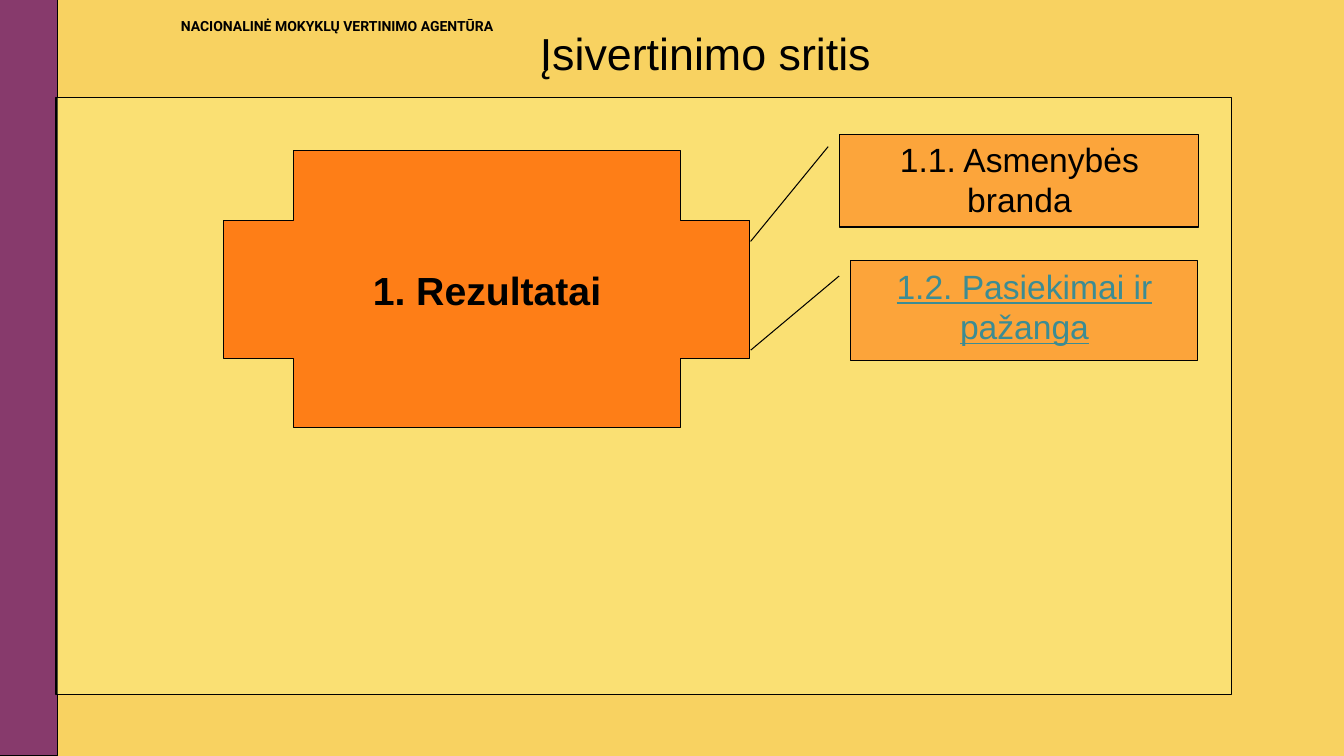
from dataclasses import dataclass

from lxml import etree
from pptx import Presentation
from pptx.dml.color import RGBColor
from pptx.enum.shapes import MSO_SHAPE
from pptx.enum.text import MSO_ANCHOR, MSO_AUTO_SIZE, PP_ALIGN
from pptx.oxml.ns import qn
from pptx.util import Emu, Pt

RECT, CROSS, CALLOUT = MSO_SHAPE.RECTANGLE, MSO_SHAPE.CROSS, MSO_SHAPE.LINE_CALLOUT_1
TOP, MIDDLE = MSO_ANCHOR.TOP, MSO_ANCHOR.MIDDLE
LEFT, CENTER = PP_ALIGN.LEFT, PP_ALIGN.CENTER
NO_FIT = MSO_AUTO_SIZE.NONE


@dataclass(frozen=True)
class Theme:
    back: str = "F8D261"
    band: str = "873A6C"
    panel: str = "FFFF99"
    accent: str = "FF6600"
    ink: str = "000000"
    link: str = "3C8C93"
    head_font: str = "Roboto"
    body_font: str = "Arial"
    head: int = 10
    item: int = 24
    area: int = 28
    title: int = 32


T = Theme()
HEADER = "NACIONALINĖ MOKYKLŲ VERTINIMO AGENTŪRA"
TITLE = "Įsivertinimo sritis"
AREA = "1. Rezultatai"
ITEMS = [
    ("1.1. Asmenybės branda", (840, 134, 359, 93), 48,
     (0.136, -0.033, 1.155, -0.249), {"color": T.ink}),
    ("1.2. Pasiekimai ir pažanga", (851, 261, 347, 100), 49,
     (0.15, -0.034, 0.892, -0.289), {"color": T.link, "underline": True}),
]
SIZE = (1344, 756)
BAND = (0, 0, 58, 756)
HEADER_BOX = (171, 13, 923, 27)
TITLE_BOX = (381, 30, 649, 45)
PANEL = (56, 98, 1176, 597)
AREA_BOX = (224, 151, 526, 277)
PX = 914400 / 100.8


def px(*values):
    return [Emu(round(v * PX)) for v in values]


def rgb(color):
    return RGBColor.from_string(color)


def add_text(shape, text, size, align=CENTER, anchor=TOP, wrap=True,
             color=T.ink, name=T.body_font, **font):
    tf = shape.text_frame
    tf.auto_size = NO_FIT
    tf.word_wrap = wrap
    tf.vertical_anchor = anchor
    p = tf.paragraphs[0]
    p.alignment = align
    r = p.add_run()
    r.text = text
    r.font.color.rgb = rgb(color)
    for key, value in {"size": Pt(size), "name": name, **font}.items():
        setattr(r.font, key, value)


def add_shape(s, kind, box, color, opacity=100, adjust=()):
    sp = s.shapes.add_shape(kind, *px(*box))
    sp.shadow.inherit = False
    sp.fill.solid()
    sp.fill.fore_color.rgb = rgb(color)
    if opacity < 100:
        fill = sp.element.spPr.find(qn("a:solidFill"))
        etree.SubElement(fill[0], qn("a:alpha"), val=str(opacity * 1000))
    sp.line.color.rgb = rgb(T.ink)
    sp.line.width = Pt(0.75)
    for i, value in enumerate(adjust):
        sp.adjustments[i] = value
    return sp


def main():
    prs = Presentation()
    prs.slide_width, prs.slide_height = px(*SIZE)
    s = prs.slides.add_slide(prs.slide_layouts[5])
    s.background.fill.solid()
    s.background.fill.fore_color.rgb = rgb(T.back)

    title = s.shapes.title
    title.left, title.top, title.width, title.height = px(*TITLE_BOX)
    add_text(title, TITLE, T.title, anchor=MIDDLE)

    add_shape(s, RECT, BAND, T.band)
    header = s.shapes.add_textbox(*px(*HEADER_BOX))
    add_text(header, HEADER, T.head, align=LEFT, name=T.head_font, bold=True)

    add_shape(s, RECT, PANEL, T.panel, 32)
    area = add_shape(s, CROSS, AREA_BOX, T.accent, 80, [0.25])
    add_text(area, AREA, T.area, anchor=MIDDLE, wrap=False, bold=True)

    for text, box, opacity, pointer, font in ITEMS:
        item = add_shape(s, CALLOUT, box, T.accent, opacity, pointer)
        add_text(item, text, T.item, **font)

    prs.save("out.pptx")


if __name__ == "__main__":
    main()
